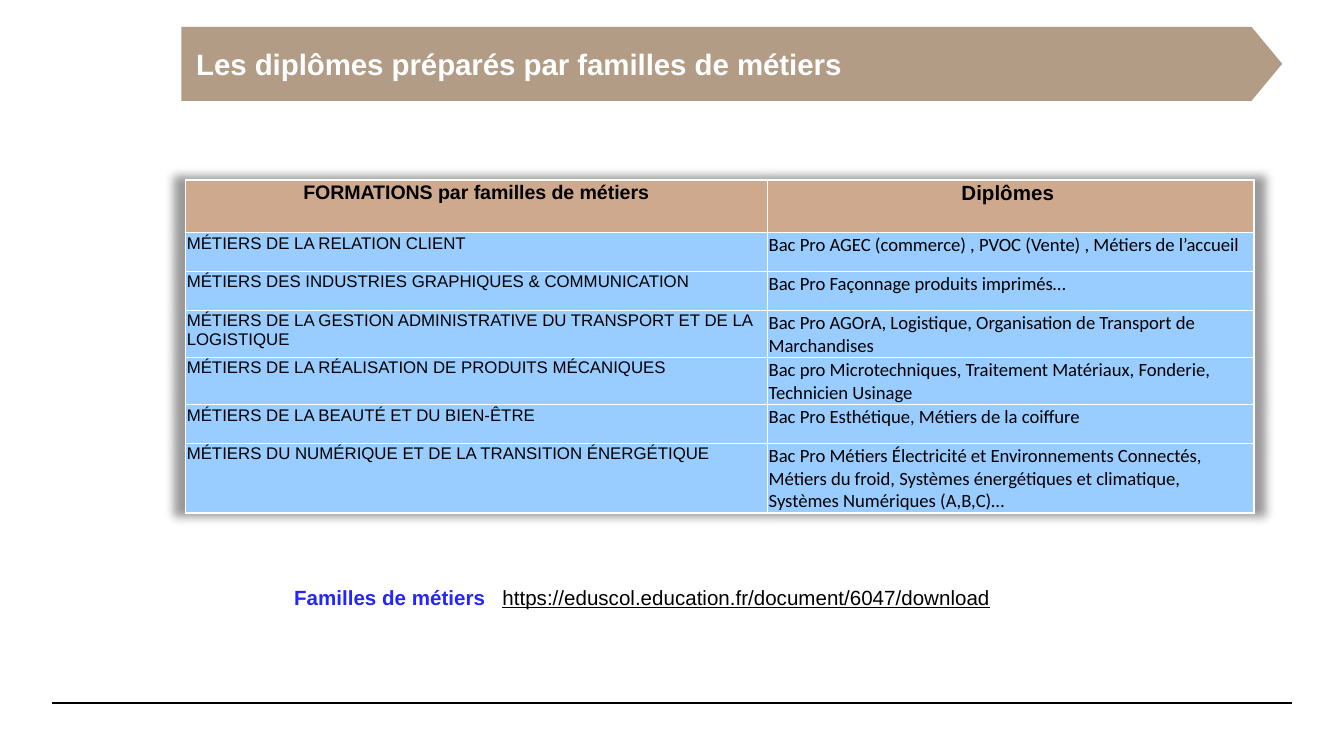
"""Build the slide listing diplomas by family of trades."""
from dataclasses import dataclass

from lxml.etree import SubElement as Sub
from pptx import Presentation as Deck
from pptx.dml.color import RGBColor as Rgb
from pptx.enum.shapes import MSO_CONNECTOR as Conn, MSO_SHAPE as Form
from pptx.enum.text import MSO_ANCHOR as Anchor, PP_ALIGN as Align
from pptx.oxml import parse_xml
from pptx.oxml.ns import nsdecls, qn
from pptx.util import Inches, Pt


@dataclass(frozen=True)
class Theme:
    black: str = "000000"
    white: str = "FFFFFF"
    blue: str = "2424FF"
    sky: str = "99CCFF"
    tan: str = "CFA98D"
    taupe: str = "B29C85"
    sans: str = "Arial"
    body: str = "Calibri"
    title: float = 15.75
    head: float = 10.5
    note: float = 11
    small: float = 9
    cell: float = 10


class Page:
    def __init__(self, slide, theme):
        self.slide, self.theme = slide, theme

    def style(self, run, size, color, bold=False, face=None, under=False):
        font = run.font
        font.name = face or self.theme.sans
        font.size, font.bold, font.underline = Pt(size), bold, under
        font.color.rgb = Rgb.from_string(color)

    def rule(self, left, right, top):
        line = self.slide.shapes.add_connector(
            Conn.STRAIGHT, Inches(left), Inches(top), Inches(right), Inches(top))
        line.line.width = Pt(0.8)
        line.line.color.rgb = Rgb.from_string(self.theme.black)
        Sub(line._element.spPr, qn("a:effectLst"))

    def banner(self, text, box):
        shape = self.slide.shapes.add_shape(Form.PENTAGON, *map(Inches, box))
        shape.shadow.inherit = False
        shape.adjustments[0] = 0.415
        shape.fill.solid()
        shape.fill.fore_color.rgb = Rgb.from_string(self.theme.taupe)
        shape.line.fill.background()
        frame = shape.text_frame
        frame.text = text
        frame.margin_left = frame.margin_right = Inches(0.11)
        frame.vertical_anchor = Anchor.MIDDLE
        para = frame.paragraphs[0]
        para.alignment = Align.JUSTIFY
        self.style(para.runs[0], self.theme.title, self.theme.white, True)

    def cell(self, cell, text, fill, size, face, head):
        cell.text = text
        cell.margin_left = cell.margin_right = cell.margin_top = Inches(0.01)
        cell.margin_bottom = 0
        para = cell.text_frame.paragraphs[0]
        para.alignment = Align.CENTER if head else Align.LEFT
        self.style(para.runs[0], size, self.theme.black, head, face)
        props = cell._tc.get_or_add_tcPr()
        for side in ("lnL", "lnR", "lnT", "lnB"):
            edge = Sub(props, qn(f"a:{side}"), w=str(Pt(1)))
            paint = Sub(edge, qn("a:solidFill"))
            Sub(paint, qn("a:srgbClr"), val=self.theme.white)
        cell.fill.solid()
        cell.fill.fore_color.rgb = Rgb.from_string(fill)

    def table(self, rows, left, top, widths, heights):
        theme = self.theme
        table = self.slide.shapes.add_table(
            len(rows), len(widths), Inches(left), Inches(top),
            Inches(sum(widths)), Inches(sum(heights))).table
        table.first_row = table.horz_banding = False
        for col, width in zip(table.columns, widths):
            col.width = Inches(width)
        for row, height in zip(table.rows, heights):
            row.height = Inches(height)
        heads = ((theme.head, theme.sans), (theme.note, theme.sans))
        cells = ((theme.small, theme.sans), (theme.cell, theme.body))
        for r, texts in enumerate(rows):
            head = r == 0
            fill = theme.tan if head else theme.sky
            for c, (text, kind) in enumerate(zip(texts, heads if head else cells)):
                self.cell(table.cell(r, c), text, fill, *kind, head)
        table._tbl.tblPr.insert(0, parse_xml(
            f'<a:effectLst {nsdecls("a")}><a:outerShdw blurRad="{Inches(0.07)}" '
            'sx="102000" sy="102000" algn="ctr" rotWithShape="0">'
            f'<a:srgbClr val="{theme.black}"><a:alpha val="40000"/></a:srgbClr>'
            '</a:outerShdw></a:effectLst>'))

    def link(self, label, url, box, stop):
        frame = self.slide.shapes.add_textbox(*map(Inches, box)).text_frame
        frame.word_wrap = True
        para = frame.paragraphs[0]
        tabs = Sub(para._p.get_or_add_pPr(), qn("a:tabLst"))
        Sub(tabs, qn("a:tab"), pos=str(Inches(stop)), algn="l")
        for text, color, main in ((label + "\t", self.theme.blue, True),
                                  (url, self.theme.black, False)):
            run = para.add_run()
            run.text = text
            self.style(run, self.theme.note, color, main, under=not main)


ROWS = (
    ("FORMATIONS par familles de métiers", "Diplômes "),
    ("MÉTIERS DE LA RELATION CLIENT",
     "Bac Pro AGEC (commerce) , PVOC (Vente) , Métiers de l’accueil"),
    ("MÉTIERS DES INDUSTRIES GRAPHIQUES & COMMUNICATION",
     "Bac Pro Façonnage produits imprimés…"),
    ("MÉTIERS DE LA GESTION ADMINISTRATIVE DU TRANSPORT ET DE LA LOGISTIQUE",
     "Bac Pro AGOrA, Logistique, Organisation de Transport de Marchandises"),
    ("MÉTIERS DE LA RÉALISATION DE PRODUITS MÉCANIQUES",
     "Bac pro Microtechniques, Traitement Matériaux, Fonderie, Technicien Usinage"),
    ("MÉTIERS DE LA BEAUTÉ ET DU BIEN-ÊTRE",
     "Bac Pro Esthétique, Métiers de la coiffure"),
    ("MÉTIERS DU NUMÉRIQUE ET DE LA TRANSITION ÉNERGÉTIQUE",
     "Bac Pro Métiers Électricité et Environnements Connectés, Métiers du froid, "
     "Systèmes énergétiques et climatique, Systèmes Numériques (A,B,C)…"),
)


def main():
    deck = Deck()
    deck.slide_width = Inches(10)
    deck.slide_height = deck.slide_width * 9 // 16
    page = Page(deck.slides.add_slide(deck.slide_layouts[6]), Theme())
    page.rule(0.39, 9.61, 5.23)
    page.table(ROWS, 1.38, 1.34, (4.33, 3.62),
               (0.39, 0.29, 0.29, 0.35, 0.35, 0.29, 0.51))
    page.banner("Les diplômes préparés par familles de métiers",
                (1.35, 0.2, 8.19, 0.55))
    page.link("Familles de métiers",
              "https://eduscol.education.fr/document/6047/download",
              (2.09, 4.3, 7.01, 0.29), 1.55)
    deck.save("out.pptx")


if __name__ == "__main__":
    main()
